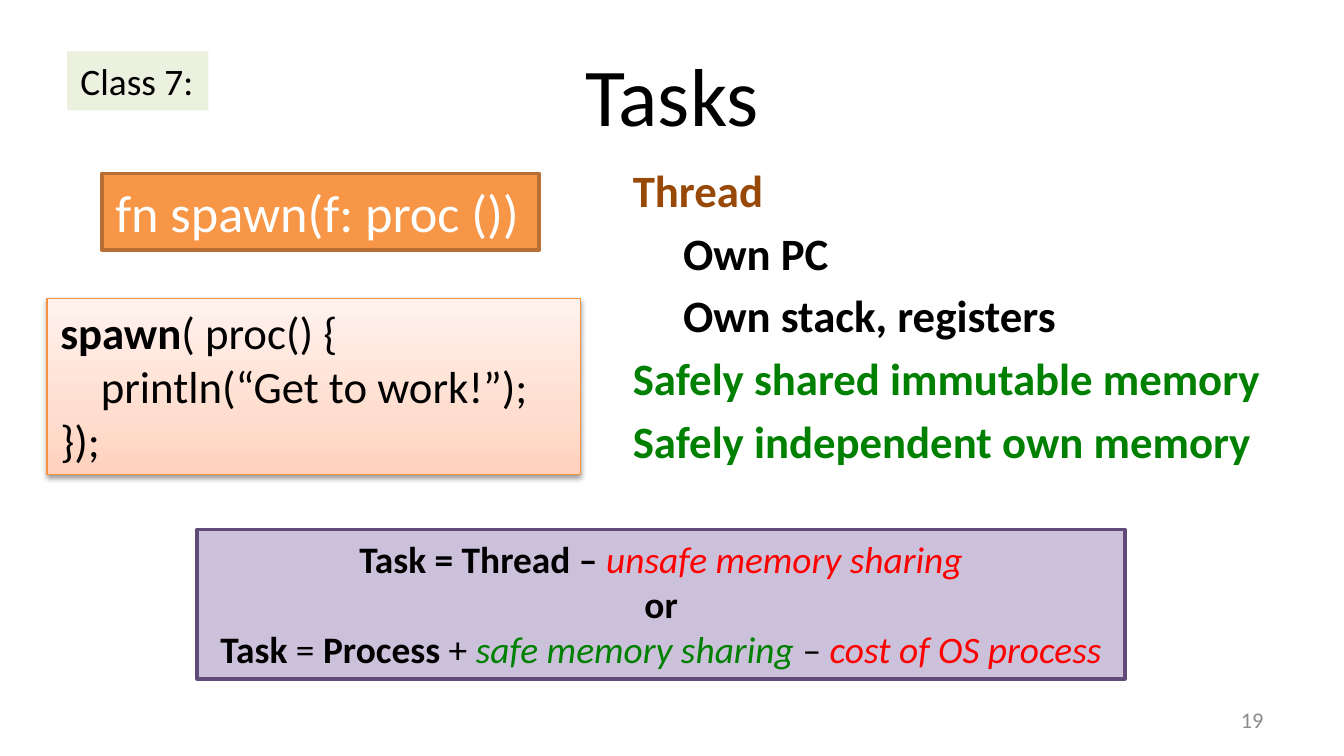
from typing import NamedTuple, Optional

from lxml import etree
from pptx import Presentation
from pptx import util as u
from pptx.dml.color import RGBColor
from pptx.enum import shapes, text
from pptx.oxml import ns

BLACK = RGBColor(0x00, 0x00, 0x00)
WHITE = RGBColor(0xFF, 0xFF, 0xFF)
GRAY = RGBColor(0x8C, 0x8C, 0x8C)
BROWN = RGBColor(0x98, 0x48, 0x07)
GREEN = RGBColor(0x00, 0x80, 0x00)
RED = RGBColor(0xFF, 0x00, 0x00)
ORANGE = RGBColor(0xF7, 0x96, 0x46)
ORANGE_EDGE = RGBColor(0xB7, 0x6F, 0x34)
CODE_EDGE = RGBColor(0xF6, 0x92, 0x40)
LILAC = RGBColor(0xCC, 0xC1, 0xDA)
PURPLE_EDGE = RGBColor(0x5F, 0x4A, 0x78)
PALE_GREEN = RGBColor(0xEB, 0xF1, 0xDE)
CODE_STOPS = ((0, RGBColor(0xFF, 0xD2, 0xBD)), (35, RGBColor(0xFF, 0xDE, 0xD0)),
              (100, RGBColor(0xFF, 0xF2, 0xED)))

FONT = "Calibri"
INDENT = u.Cm(0.95)


class Box(NamedTuple):
    """Position and size in centimetres."""
    left: float
    top: float
    width: float
    height: float


class Run(NamedTuple):
    text: str
    color: RGBColor = BLACK
    bold: bool = False
    italic: bool = False


class Line(NamedTuple):
    runs: tuple[Run, ...]
    indented: bool = False


def line(content: str, color: RGBColor = BLACK, bold: bool = False,
         indented: bool = False) -> Line:
    return Line((Run(content, color, bold),), indented)


def write(s, lines: list[Line], *, size: float, align=text.PP_ALIGN.LEFT,
          anchor=text.MSO_ANCHOR.TOP, wrap: bool = True, gap: float = 0) -> None:
    tf = s.text_frame
    tf.word_wrap = wrap
    tf.vertical_anchor = anchor
    for i, item in enumerate(lines):
        p = tf.add_paragraph() if i else tf.paragraphs[0]
        p.alignment = align
        if i and gap:
            p.space_before = u.Pt(gap)
        if item.indented:
            p._p.get_or_add_pPr().set("marL", str(INDENT))
        for part in item.runs:
            r = p.add_run()
            r.text = part.text
            r.font.name = FONT
            r.font.size = u.Pt(size)
            r.font.bold = part.bold
            r.font.italic = part.italic
            r.font.color.rgb = part.color


def add_text(slide, box: Box, lines: list[Line], **fmt) -> None:
    s = slide.shapes.add_textbox(*map(u.Cm, box))
    write(s, lines, **fmt)


def add_panel(slide, box: Box, lines: list[Line], fill: Optional[RGBColor] = None,
              edge: Optional[RGBColor] = None, edge_width: float = 2, **fmt):
    s = slide.shapes.add_shape(shapes.MSO_SHAPE.RECTANGLE, *map(u.Cm, box))
    s.shadow.inherit = False
    if fill is not None:
        s.fill.solid()
        s.fill.fore_color.rgb = fill
    if edge is None:
        s.line.fill.background()
    else:
        s.line.color.rgb = edge
        s.line.width = u.Pt(edge_width)
    write(s, lines, **fmt)
    return s


def add_child(parent, tag: str, **attrs):
    return etree.SubElement(parent, ns.qn(tag), {k: str(v) for k, v in attrs.items()})


def shade(s, stops) -> None:
    """Fill from bottom to top with the given stops."""
    s.fill.gradient()
    s.fill.gradient_angle = 90
    gs_list = s._element.spPr.find(ns.qn("a:gradFill")).find(ns.qn("a:gsLst"))
    for old in list(gs_list):
        gs_list.remove(old)
    for percent, color in stops:
        stop = add_child(gs_list, "a:gs", pos=percent * 1000)
        add_child(stop, "a:srgbClr", val=color)


def drop_shadow(s) -> None:
    effects = s._element.spPr.find(ns.qn("a:effectLst"))
    shadow = add_child(effects, "a:outerShdw", blurRad=u.Pt(3.1), dist=u.Pt(1.6),
                       dir=90 * 60000, rotWithShape=0)
    color = add_child(shadow, "a:srgbClr", val=BLACK)
    add_child(color, "a:alpha", val=38000)


def main() -> None:
    prs = Presentation()
    prs.slide_width, prs.slide_height = u.Cm(25.4), u.Cm(14.29)
    slide = prs.slides.add_slide(prs.slide_layouts[6])
    center, middle = text.PP_ALIGN.CENTER, text.MSO_ANCHOR.MIDDLE

    add_text(slide, Box(1.27, 0.58, 22.86, 2.39), [line("Tasks")],
             size=44, align=center, anchor=middle)
    add_text(slide, Box(11.71, 2.95, 12.42, 7.04), [
        line("Thread", BROWN, True),
        line("Own PC", bold=True, indented=True),
        line("Own stack, registers", bold=True, indented=True),
        line("Safely shared immutable memory", GREEN, True),
        line("Safely independent own memory", GREEN, True),
    ], size=24, gap=4.8)
    add_text(slide, Box(18.21, 13.23, 5.92, 0.76), [line("19", GRAY)],
             size=12, align=text.PP_ALIGN.RIGHT, anchor=middle)

    add_panel(slide, Box(1.93, 3.28, 8.26, 1.45), [line("fn spawn(f: proc ())", WHITE)],
              ORANGE, ORANGE_EDGE, size=28, wrap=False)
    code = add_panel(slide, Box(0.89, 5.64, 10.08, 3.33), [
        Line((Run("spawn", bold=True), Run("( proc() {"))),
        line("    println(“Get to work!”);"),
        line("});"),
    ], edge=CODE_EDGE, edge_width=0.75, size=24)
    shade(code, CODE_STOPS)
    drop_shadow(code)

    add_panel(slide, Box(3.73, 10.01, 17.53, 2.82), [
        Line((Run("Task = Thread – ", bold=True),
              Run("unsafe memory sharing", RED, italic=True))),
        line("or", bold=True),
        Line((Run("Task", bold=True), Run(" = "), Run("Process", bold=True), Run(" + "),
              Run("safe memory sharing", GREEN, italic=True), Run(" – "),
              Run("cost of OS process", RED, italic=True))),
    ], LILAC, PURPLE_EDGE, size=20, align=center, wrap=False)
    add_panel(slide, Box(1.27, 0.97, 2.67, 1.12), [line("Class 7:")],
              PALE_GREEN, size=20, wrap=False)

    prs.save("out.pptx")


if __name__ == "__main__":
    main()
